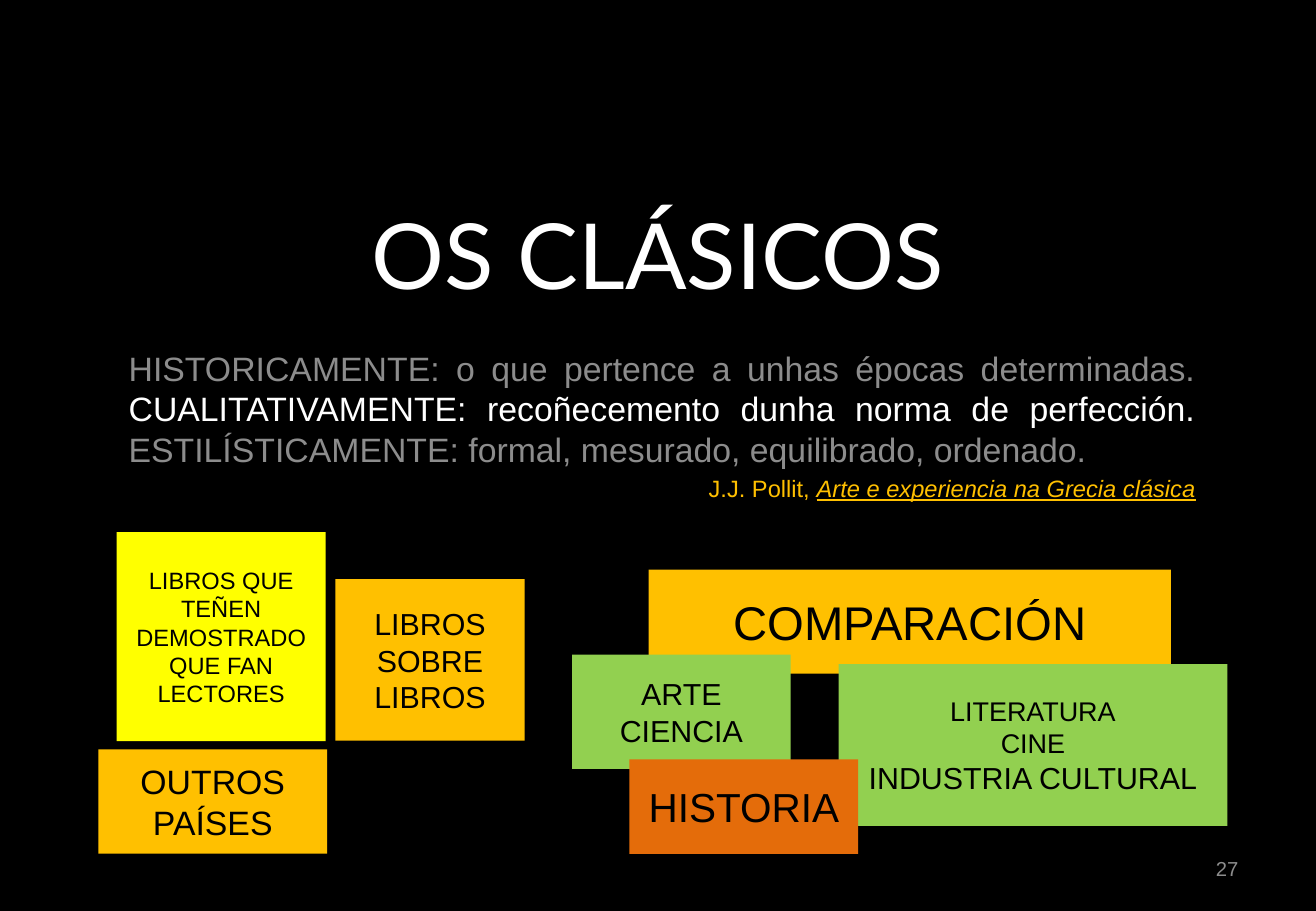
from pptx import Presentation
from pptx.dml.color import RGBColor
from pptx.enum.shapes import MSO_SHAPE as Shape
from pptx.enum.text import MSO_ANCHOR as Anchor, PP_ALIGN as Align
from pptx.util import Cm, Pt

BLACK, WHITE, GREY = "000000", "FFFFFF", "8C8C8C"
AMBER, GREEN, ORANGE, YELLOW = "FFC000", "92D050", "E46C0A", "FFFF00"


def color(value):
    return RGBColor.from_string(value)


def set_font(font, size, value, name="Arial"):
    font.name, font.size = name, Pt(size)
    font.color.rgb = color(value)


def add_text_frame(slide, box, anchor=Anchor.MIDDLE):
    frame = slide.shapes.add_textbox(*map(Cm, box)).text_frame
    frame.word_wrap = True
    frame.vertical_anchor = anchor
    return frame


def add_line(slide, box, text, size, value, align, name="Arial"):
    """A text box holding a single line."""
    paragraph = add_text_frame(slide, box).paragraphs[0]
    paragraph.text, paragraph.alignment = text, align
    set_font(paragraph.font, size, value, name)


def add_definitions(slide, box):
    """Three senses of the word, followed by the source."""
    frame = add_text_frame(slide, box, Anchor.TOP)

    # Senses
    senses = frame.paragraphs[0]
    senses.alignment, senses.space_before = Align.JUSTIFY, Pt(4)
    for text, value in (
        ("HISTORICAMENTE: o que pertence a unhas épocas determinadas. ", GREY),
        ("CUALITATIVAMENTE: recoñecemento dunha norma de perfección. ", WHITE),
        ("ESTILÍSTICAMENTE: formal, mesurado, equilibrado, ordenado.", GREY),
    ):
        run = senses.add_run()
        run.text = text
        set_font(run.font, 20, value)

    # Source
    source = frame.add_paragraph()
    source.alignment, source.space_before = Align.RIGHT, Pt(2.8)
    set_font(source.font, 14, AMBER)
    source.add_run().text = "J.J. Pollit, "
    title = source.add_run()
    title.text = "Arte e experiencia na Grecia clásica"
    title.font.italic = title.font.underline = True


def add_blocks(slide, origin, blocks):
    """Filled rectangles, each placed relative to the group's corner."""
    left, top = origin
    for x, y, width, height, fill, lines in blocks:
        block = slide.shapes.add_shape(
            Shape.RECTANGLE, Cm(left + x), Cm(top + y), Cm(width), Cm(height))
        block.shadow.inherit = False
        block.fill.solid()
        block.fill.fore_color.rgb = color(fill)
        block.line.fill.background()
        frame = block.text_frame
        frame.word_wrap = True
        frame.vertical_anchor = Anchor.MIDDLE
        for index, (text, size) in enumerate(lines):
            paragraph = frame.add_paragraph() if index else frame.paragraphs[0]
            paragraph.text, paragraph.alignment = text, Align.CENTER
            set_font(paragraph.font, size, BLACK)


def add_books(slide, origin):
    add_blocks(slide, origin, [
        (0, 4.54, 4.78, 2.18, AMBER, [("OUTROS PAÍSES", 20)]),
        (4.95, 0.98, 3.96, 3.38, AMBER, [("LIBROS SOBRE LIBROS", 18)]),
        (0.38, 0, 4.37, 4.37, YELLOW,
         [("LIBROS QUE TEÑEN DEMOSTRADO QUE FAN LECTORES", 14)]),
    ])


def add_comparison(slide, origin):
    add_blocks(slide, origin, [
        (1.6, 0, 10.92, 2.18, AMBER, [("COMPARACIÓN", 28)]),
        (0, 1.78, 4.57, 2.39, GREEN, [("ARTE", 18), ("CIENCIA", 18)]),
        (5.57, 1.98, 8.13, 3.38, GREEN,
         [("LITERATURA", 16), ("CINE", 16), ("INDUSTRIA CULTURAL", 18)]),
        (1.2, 3.97, 4.78, 1.98, ORANGE, [("HISTORIA", 24)]),
    ])


def main():
    presentation = Presentation()
    presentation.slide_width, presentation.slide_height = Cm(27.51), Cm(19.05)
    slide = presentation.slides.add_slide(presentation.slide_layouts[6])
    slide.background.fill.solid()
    slide.background.fill.fore_color.rgb = color(BLACK)

    # Heading and definitions
    add_line(slide, (2.06, 3.25, 23.39, 4.09), "OS CLÁSICOS", 54, WHITE,
             Align.CENTER, "Lato")
    add_definitions(slide, (2.44, 7.14, 22.81, 3.96))

    # Page number
    add_line(slide, (19.71, 17.65, 6.43, 1.02), "27", 12, GREY, Align.RIGHT)

    # Groups of blocks
    add_books(slide, (2.06, 11.13))
    add_comparison(slide, (11.96, 11.91))

    presentation.save("out.pptx")


if __name__ == "__main__":
    main()
